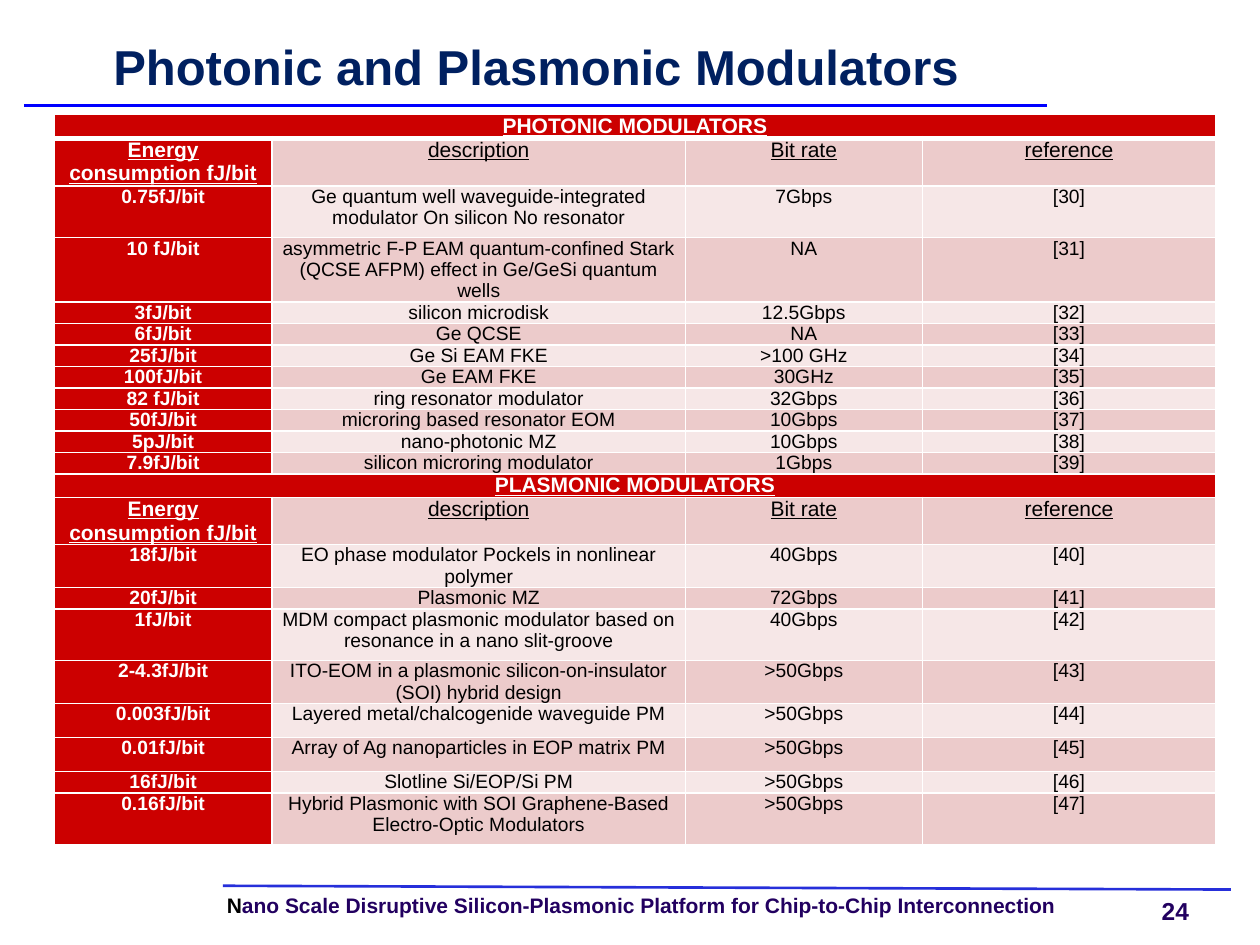
from dataclasses import dataclass

from lxml import etree
from pptx import Presentation
from pptx.dml.color import RGBColor
from pptx.enum.shapes import MSO_CONNECTOR
from pptx.enum.text import MSO_ANCHOR, MSO_AUTO_SIZE, PP_ALIGN
from pptx.oxml.ns import qn
from pptx.util import Pt

CENTER, LEFT = PP_ALIGN.CENTER, PP_ALIGN.LEFT
TOP, MIDDLE = MSO_ANCHOR.TOP, MSO_ANCHOR.MIDDLE
NO_FIT = MSO_AUTO_SIZE.NONE
STRAIGHT = MSO_CONNECTOR.STRAIGHT
EMU_PER_PX = 9144  # 100 px to the inch
TITLE_ONLY = 5


@dataclass(frozen=True)
class Theme:
    font: str = "Arial"
    navy: str = "002060"
    purple: str = "220060"
    black: str = "000000"
    white: str = "FFFFFF"
    red: str = "CC0000"
    pink: str = "ECCBCB"
    light: str = "F6E7E7"
    title_rule: str = "0000FF"
    footer_rule: str = "262FDA"
    title_size: int = 28
    number_size: int = 14
    head_size: int = 12
    body_size: int = 11


def px(n):
    return n * EMU_PER_PX


class SlideBuilder:
    def __init__(self, prs, theme):
        self.theme = theme
        self.slide = prs.slides.add_slide(prs.slide_layouts[TITLE_ONLY])

    def run(self, p, text, size, color, bold=True, underline=False):
        r = p.add_run()
        r.text = text
        font = r.font
        font.name, font.size = self.theme.font, Pt(size)
        font.bold, font.underline = bold, underline
        font.color.rgb = RGBColor.from_string(color)

    def frame(self, sp, anchor, wrap=True):
        """Clear the margins of a shape's text and return its first paragraph."""
        tf = sp.text_frame
        tf.margin_left = tf.margin_right = tf.margin_top = tf.margin_bottom = 0
        tf.auto_size, tf.word_wrap, tf.vertical_anchor = NO_FIT, wrap, anchor
        return tf.paragraphs[0]

    def title(self, text, x, y, w, h):
        sp = self.slide.shapes.title
        sp.left, sp.top, sp.width, sp.height = px(x), px(y), px(w), px(h)
        p = self.frame(sp, MIDDLE)
        p.alignment, p.line_spacing = CENTER, Pt(32)
        self.run(p, text, self.theme.title_size, self.theme.navy)

    def text(self, runs, x, y, w, h, size, spacing=1.0, wrap=True):
        sp = self.slide.shapes.add_textbox(px(x), px(y), px(w), px(h))
        p = self.frame(sp, TOP, wrap)
        p.alignment, p.line_spacing = LEFT, spacing
        for text, color in runs:
            self.run(p, text, size, color)

    def line(self, x1, y1, x2, y2, color):
        sp = self.slide.shapes.add_connector(STRAIGHT, px(x1), px(y1), px(x2), px(y2))
        sp.line.color.rgb = RGBColor.from_string(color)
        sp.line.width = Pt(1.5)
        etree.SubElement(sp._element.spPr, qn("a:effectLst"))

    def borders(self, cell, top, bottom):
        tc_pr = cell._tc.get_or_add_tcPr()
        for side, width in (("L", 1), ("R", 1), ("T", top), ("B", bottom)):
            ln = etree.SubElement(tc_pr, qn(f"a:ln{side}"), w=str(Pt(width)))
            fill = etree.SubElement(ln, qn("a:solidFill"))
            etree.SubElement(fill, qn("a:srgbClr"), val=self.theme.white)

    def cell(self, cell, text, fill, color, heading):
        cell.margin_left = cell.margin_right = px(6)
        cell.margin_top = cell.margin_bottom = 0
        cell.fill.solid()
        cell.fill.fore_color.rgb = RGBColor.from_string(fill)
        if not text:
            return
        t = self.theme
        p = cell.text_frame.paragraphs[0]
        p.alignment = CENTER
        if not heading:
            p.space_after = Pt(6)
        self.run(p, text, t.head_size if heading else t.body_size, color,
                 bold=color == t.white, underline=heading)

    def table(self, sections, x, y, widths, heights):
        """Stack sections, each a full-width name, a heading row and data rows."""
        t = self.theme
        rows = []
        for name, data in sections:
            rows += [((name, "", "", ""), True), (HEADINGS, True)]
            rows += [(row, False) for row in data]
        table = self.slide.shapes.add_table(
            len(rows), len(widths), px(x), px(y), px(sum(widths)), px(sum(heights))).table
        table.first_row = table.horz_banding = False
        for column, width in zip(table.columns, widths):
            column.width = px(width)
        for i, (row, heading) in enumerate(rows):
            table.rows[i].height = px(heights[i])
            is_name = heading and row != HEADINGS
            for j, text in enumerate(row):
                cell = table.cell(i, j)
                self.borders(cell, top=3 if i == 1 else 1, bottom=3 if i == 0 else 1)
                if is_name or j == 0:
                    fill, color = t.red, t.white
                else:
                    fill, color = (t.pink if i % 2 else t.light), t.black
                self.cell(cell, text, fill, color, heading)
            if is_name:
                table.cell(i, 0).merge(table.cell(i, len(widths) - 1))


HEADINGS = ("Energy consumption fJ/bit", "description", "Bit rate", "reference")
PHOTONIC = [
    ("0.75fJ/bit", "Ge quantum well waveguide-integrated modulator On silicon No resonator",
     "7Gbps", "[30]"),
    ("10 fJ/bit", "asymmetric F-P EAM quantum-confined Stark (QCSE AFPM) effect in "
     "Ge/GeSi quantum wells", "NA", "[31]"),
    ("3fJ/bit", "silicon microdisk", "12.5Gbps", "[32]"),
    ("6fJ/bit", "Ge QCSE", "NA", "[33]"),
    ("25fJ/bit", "Ge Si EAM FKE", ">100 GHz", "[34]"),
    ("100fJ/bit", "Ge EAM FKE", "30GHz", "[35]"),
    ("82 fJ/bit", "ring resonator modulator", "32Gbps", "[36]"),
    ("50fJ/bit", "microring based resonator EOM", "10Gbps", "[37]"),
    ("5pJ/bit", "nano-photonic MZ", "10Gbps", "[38]"),
    ("7.9fJ/bit", "silicon microring modulator", "1Gbps", "[39]"),
]
PLASMONIC = [
    ("18fJ/bit", "EO phase modulator Pockels in nonlinear polymer", "40Gbps", "[40]"),
    ("20fJ/bit", "Plasmonic MZ", "72Gbps", "[41]"),
    ("1fJ/bit", "MDM compact plasmonic modulator based on resonance in a nano slit-groove",
     "40Gbps", "[42]"),
    ("2-4.3fJ/bit", "ITO-EOM in a plasmonic silicon-on-insulator (SOI) hybrid design",
     ">50Gbps", "[43]"),
    ("0.003fJ/bit", "Layered metal/chalcogenide waveguide PM", ">50Gbps", "[44]"),
    ("0.01fJ/bit", "Array of Ag nanoparticles in EOP matrix PM", ">50Gbps", "[45]"),
    ("16fJ/bit", "Slotline Si/EOP/Si PM", ">50Gbps", "[46]"),
    ("0.16fJ/bit", "Hybrid Plasmonic with SOI Graphene-Based Electro-Optic Modulators",
     ">50Gbps", "[47]"),
]
COLUMN_WIDTHS = [173, 328, 188, 233]
ROW_HEIGHTS = [17, 38, 41, 43] + [15] * 8 + [17, 32, 29, 15, 41, 30, 27, 27, 15, 41]


def main():
    prs = Presentation()
    prs.slide_width, prs.slide_height = px(1000), px(750)
    t = Theme()
    s = SlideBuilder(prs, t)
    s.title("Photonic and Plasmonic Modulators", 20, 20, 811, 67)
    s.line(19, 84, 831, 84, t.title_rule)
    s.table([("PHOTONIC MODULATORS", PHOTONIC), ("PLASMONIC MODULATORS", PLASMONIC)],
            43, 91, COLUMN_WIDTHS, ROW_HEIGHTS)
    s.line(177, 703, 977, 706, t.footer_rule)
    footer = "ano Scale Disruptive Silicon-Plasmonic Platform for Chip-to-Chip Interconnection"
    s.text([("N", t.black), (footer, t.purple)], 180, 711, 714, 18, t.head_size, spacing=0.9)
    s.text([("24", t.purple)], 922, 711, 24, 23, t.number_size, wrap=False)
    prs.save("out.pptx")


if __name__ == "__main__":
    main()
